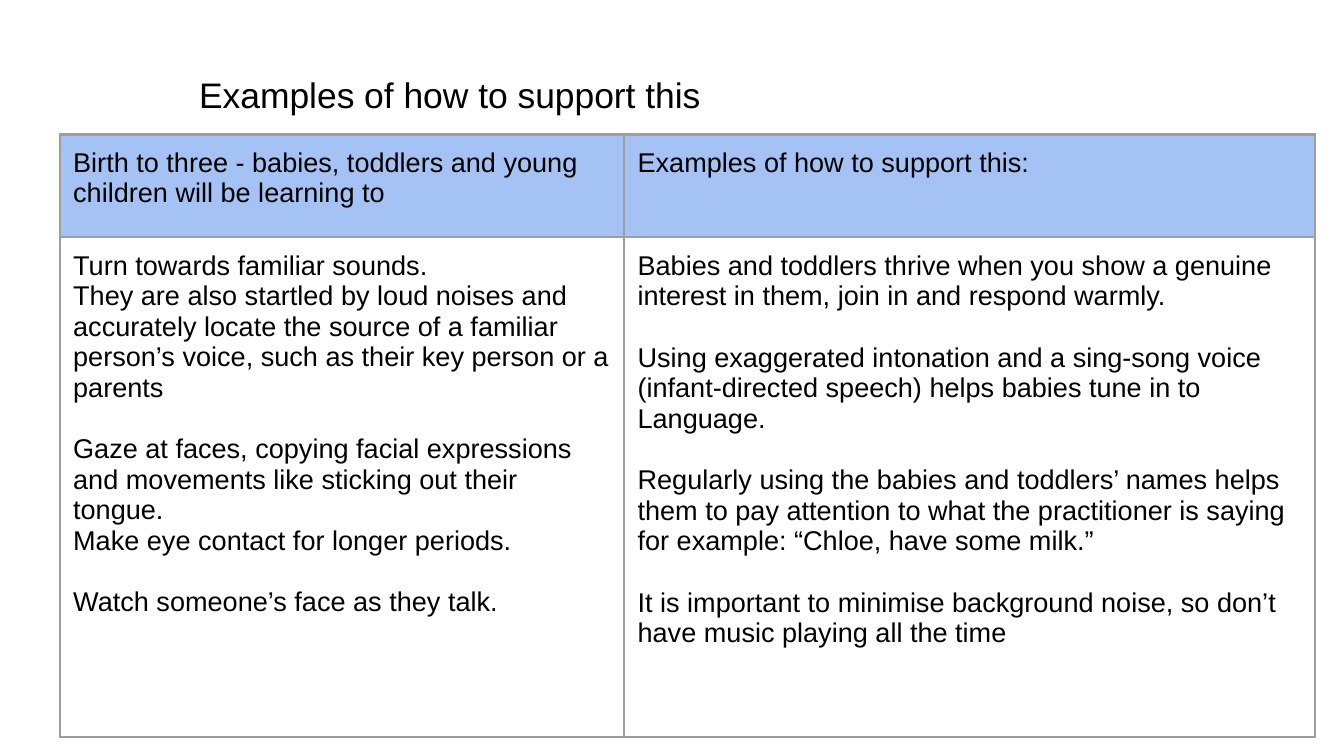
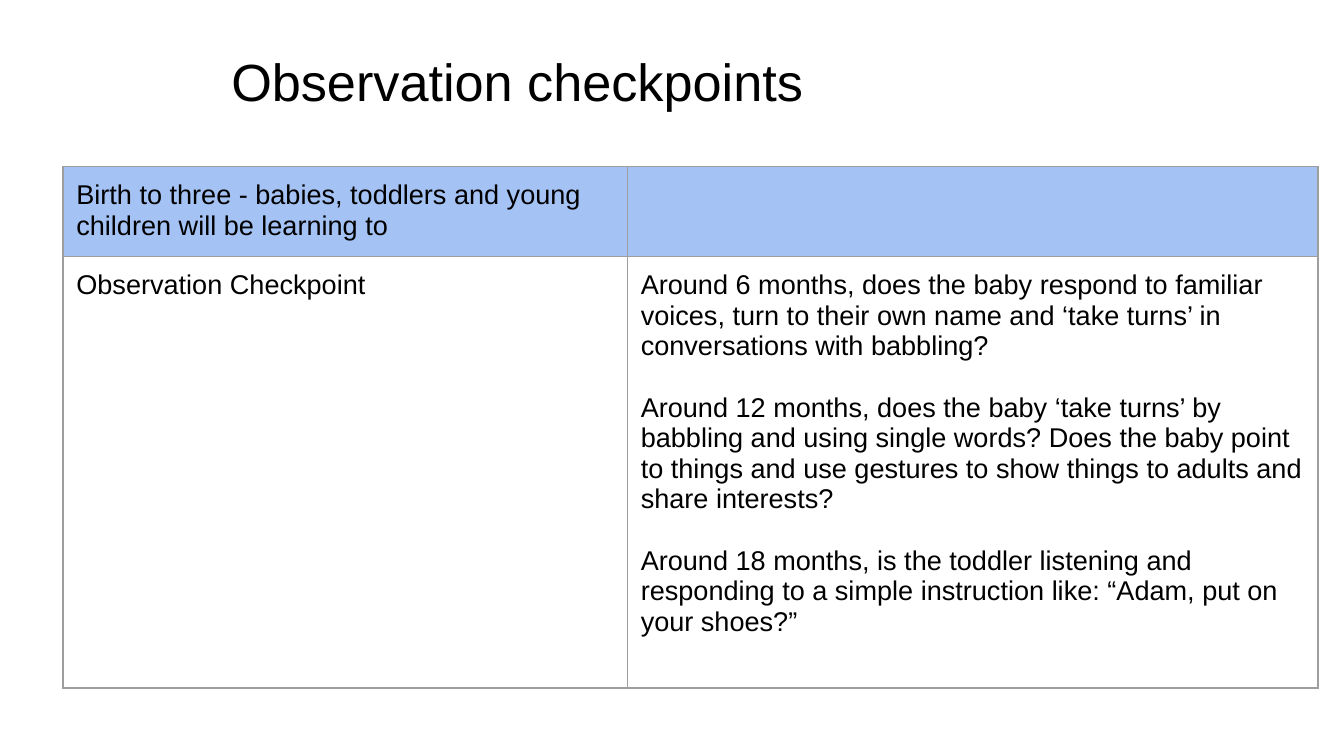
"""Build two slides on how babies and toddlers learn to listen."""
import pptx
import pptx.dml.color
import pptx.enum.text
import pptx.util
from lxml import etree

Pt = pptx.util.Pt
FONT = "Arial"
COLORS = {"text": "000000", "head": "A4C2F4", "rule": "9E9E9E"}
SIZE = 14.5
GAP = 16.7
INSET = 7.2
COLS = (302.4, 370)
TOPIC = [["Birth to three - babies, toddlers and young children will be learning to"]]

SUPPORT = [
    [TOPIC, [["Examples of how to support this:"]]],
    [
        [
            ["Turn towards familiar sounds.",
             "They are also startled by loud noises and accurately locate the source of a familiar",
             "person’s voice, such as their key person or a parents"],
            ["Gaze at faces, copying facial expressions and movements like sticking out their tongue.",
             "Make eye contact for longer periods."],
            ["Watch someone’s face as they talk."],
        ],
        [
            ["Babies and toddlers thrive when you show a genuine interest in them, "
             "join in and respond warmly."],
            ["Using exaggerated intonation and a sing-song voice",
             "(infant-directed speech) helps babies tune in to",
             "Language."],
            ["Regularly using the babies and toddlers’ names helps them to pay attention to what "
             "the practitioner is saying for example: “Chloe, have some milk.”"],
            ["It is important to minimise background noise, so don’t have music playing all the time"],
        ],
    ],
]

CHECKS = [
    [TOPIC, []],
    [
        [["Observation Checkpoint"]],
        [
            ["Around 6 months, does the baby respond to familiar voices, turn to their own name "
             "and ‘take turns’ in conversations with babbling?"],
            ["Around 12 months, does the baby ‘take turns’ by babbling and using single words? "
             "Does the baby point to things and use gestures to show things to adults and share "
             "interests?"],
            ["Around 18 months, is the toddler listening and responding to a simple instruction "
             "like: “Adam, put on your shoes?”"],
        ],
    ],
]


def paint(name):
    return pptx.dml.color.RGBColor.from_string(COLORS[name])


def style(para, size):
    for run in para.runs:
        run.font.name = FONT
        run.font.size = Pt(size)
        run.font.bold = False
        run.font.color.rgb = paint("text")


def add_title(slide, text, box, size, indent=0):
    title = slide.shapes.title
    title.left, title.top, title.width, title.height = map(Pt, box)
    frame = title.text_frame
    frame.text = text
    frame.word_wrap = True
    frame.auto_size = pptx.enum.text.MSO_AUTO_SIZE.NONE
    frame.vertical_anchor = pptx.enum.text.MSO_ANCHOR.TOP
    frame.margin_left = Pt(INSET + indent)
    frame.margin_top = Pt(INSET + 0.12 * size)
    frame.margin_right = frame.margin_bottom = Pt(INSET)
    para = frame.paragraphs[0]
    para.alignment = pptx.enum.text.PP_ALIGN.LEFT
    para.line_spacing = 1.0
    style(para, size)


def add_rules(cell, width):
    props = cell._tc.get_or_add_tcPr()
    space = props.nsmap["a"]
    for side in ("lnL", "lnR", "lnT", "lnB"):
        line = etree.SubElement(props, f"{{{space}}}{side}", w=str(Pt(width)))
        fill = etree.SubElement(line, f"{{{space}}}solidFill")
        etree.SubElement(fill, f"{{{space}}}srgbClr", val=COLORS["rule"])


def fill_cell(cell, blocks):
    frame = cell.text_frame
    cell.margin_left = cell.margin_right = Pt(INSET)
    cell.margin_top = cell.margin_bottom = Pt(INSET)
    lines = [(text, GAP if num and not pos else 0)
             for num, block in enumerate(blocks)
             for pos, text in enumerate(block)]
    for num, (text, gap) in enumerate(lines):
        para = frame.add_paragraph() if num else frame.paragraphs[0]
        para.text = text
        if gap:
            para.space_before = Pt(gap)
        style(para, SIZE)


def add_grid(slide, data, left, top, highs, width):
    frame = slide.shapes.add_table(len(data), len(COLS), Pt(left), Pt(top),
                                   Pt(sum(COLS)), Pt(sum(highs)))
    table = frame.table
    table.first_row = table.horz_banding = False
    for col, wide in zip(table.columns, COLS):
        col.width = Pt(wide)
    for num, (row, high) in enumerate(zip(table.rows, highs)):
        row.height = Pt(high)
        for cell, blocks in zip(row.cells, data[num]):
            fill_cell(cell, blocks)
            add_rules(cell, width)
            if num:
                cell.fill.background()
            else:
                cell.fill.solid()
                cell.fill.fore_color.rgb = paint("head")


def main():
    deck = pptx.Presentation()
    deck.slide_width, deck.slide_height = Pt(720), Pt(405)
    plain = deck.slide_layouts[5]

    slide = deck.slides.add_slide(plain)
    add_grid(slide, SUPPORT, 32, 72, (55, 268), 1.5)
    add_title(slide, "Examples of how to support this", (99.5, 29.5, 419, 37.5), 19)

    slide = deck.slides.add_slide(plain)
    add_grid(slide, CHECKS, 33.7, 89.2, (48.2, 231.2), 0.75)
    add_title(slide, "Observation checkpoints", (85.7, 15.8, 402, 60), 28, 31)

    deck.save("out.pptx")


if __name__ == "__main__":
    main()
